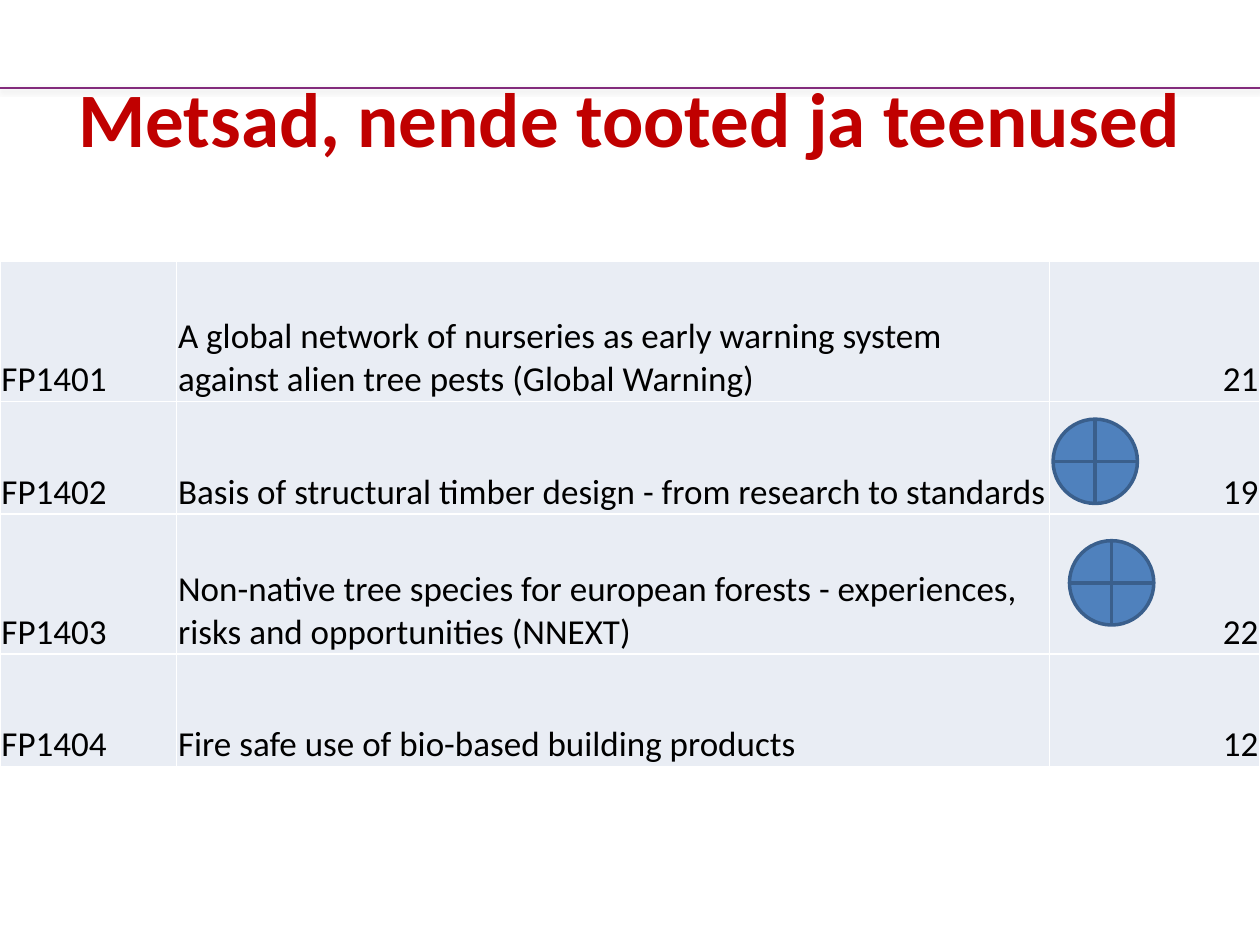
from lxml.etree import SubElement
from pptx import Presentation
from pptx.dml.color import RGBColor
from pptx.enum.shapes import MSO_CONNECTOR, MSO_SHAPE
from pptx.enum.text import MSO_ANCHOR, PP_ALIGN
from pptx.oxml.ns import qn
from pptx.util import Cm, Pt

WIDE, HIGH = 25.4, 19.05
ROWS = [
    ("FP1401", "A global network of nurseries as early warning system "
               "against alien tree pests (Global Warning)", "21"),
    ("FP1402", "Basis of structural timber design - from research to standards", "19"),
    ("FP1403", "Non-native tree species for european forests - experiences, "
               "risks and opportunities (NNEXT)", "22"),
    ("FP1404", "Fire safe use of bio-based building products", "12"),
]
COLS = (3.56, 17.6, 4.24)
TALL, LOW = 2.82, 2.27
ALIGNS = (PP_ALIGN.LEFT, PP_ALIGN.LEFT, PP_ALIGN.RIGHT)


def color(code):
    return RGBColor.from_string(code)


def assign(item, values):
    for name, value in values.items():
        setattr(item, name, value)


def add_xml(parent, tag, **attrs):
    return SubElement(parent, qn(tag), attrs)


class Painter:
    """Holds the style and the slide being drawn."""
    face = "Calibri"
    title = {"size": Pt(44), "bold": True}
    body = {"size": Pt(20), "bold": False}
    red, black, white = "C00000", "000000", "FFFFFF"
    plum, gray, pale = "832B7C", "808080", "E9EDF4"
    blue, navy = "4F81BD", "3A5F8C"
    inset = {"margin_left": Cm(0.03), "margin_right": Cm(0.03),
             "margin_top": Cm(0.03), "margin_bottom": 0,
             "vertical_anchor": MSO_ANCHOR.BOTTOM}

    def __init__(self, slide):
        self.slide = slide
        self.shapes = slide.shapes

    def label(self, frame, text, style, tint, align):
        para = frame.paragraphs[0]
        para.alignment = align
        run = para.add_run()
        run.text = text
        assign(run.font, {"name": self.face, **style})
        run.font.color.rgb = color(tint)

    def rule(self, y):
        """Draw a full-width line with a soft shadow below it."""
        line = self.shapes.add_connector(
            MSO_CONNECTOR.STRAIGHT, 0, Cm(y), Cm(WIDE), Cm(y))
        line.line.color.rgb = color(self.plum)
        line.line.width = Pt(1)
        effects = add_xml(line._element.spPr, "a:effectLst")
        shadow = add_xml(effects, "a:outerShdw", blurRad=str(Pt(3.1)),
                         dist=str(Pt(1)), dir="5400000", rotWithShape="0")
        tint = add_xml(shadow, "a:srgbClr", val=self.gray)
        add_xml(tint, "a:alpha", val="25000")

    def heading(self, text, x, y, w, h):
        frame = self.shapes.add_textbox(Cm(x), Cm(y), Cm(w), Cm(h)).text_frame
        assign(frame, {"word_wrap": True, "vertical_anchor": MSO_ANCHOR.MIDDLE})
        self.label(frame, text, self.title, self.red, PP_ALIGN.CENTER)

    def edge(self, cell):
        """Give a cell thin white borders; they must come before its fill."""
        props = cell._tc.get_or_add_tcPr()
        for side in "LRTB":
            line = add_xml(props, f"a:ln{side}", w=str(Pt(1)))
            add_xml(add_xml(line, "a:solidFill"), "a:srgbClr", val=self.white)

    def table(self, rows, cols, heights, y):
        grid = self.shapes.add_table(len(rows), len(cols), 0, Cm(y),
                                     Cm(sum(cols)), Cm(sum(heights))).table
        assign(grid, {"first_row": False, "horz_banding": False})
        for col, width in zip(grid.columns, cols):
            col.width = Cm(width)
        for row, height, texts in zip(grid.rows, heights, rows):
            row.height = Cm(height)
            for cell, text, align in zip(row.cells, texts, ALIGNS):
                assign(cell, self.inset)
                self.edge(cell)
                cell.fill.solid()
                cell.fill.fore_color.rgb = color(self.pale)
                self.label(cell.text_frame, text, self.body, self.black, align)

    def wheel(self, x, y, size):
        disc = self.shapes.add_shape(
            MSO_SHAPE.FLOWCHART_OR, Cm(x), Cm(y), Cm(size), Cm(size))
        disc.shadow.inherit = False
        disc.fill.solid()
        disc.fill.fore_color.rgb = color(self.blue)
        disc.line.color.rgb = color(self.navy)
        disc.line.width = Pt(2)


def main():
    deck = Presentation()
    assign(deck, {"slide_width": Cm(WIDE), "slide_height": Cm(HIGH)})
    paint = Painter(deck.slides.add_slide(deck.slide_layouts[6]))
    paint.rule(1.78)
    paint.heading("Metsad, nende tooted ja teenused", 1.27, 0.76, 22.86, 3.18)
    paint.table(ROWS, COLS, (TALL, LOW) * 2, 5.27)
    for x, y in ((21.56, 10.9), (21.23, 8.45)):
        paint.wheel(x, y, 1.7)
    deck.save("out.pptx")


if __name__ == "__main__":
    main()
